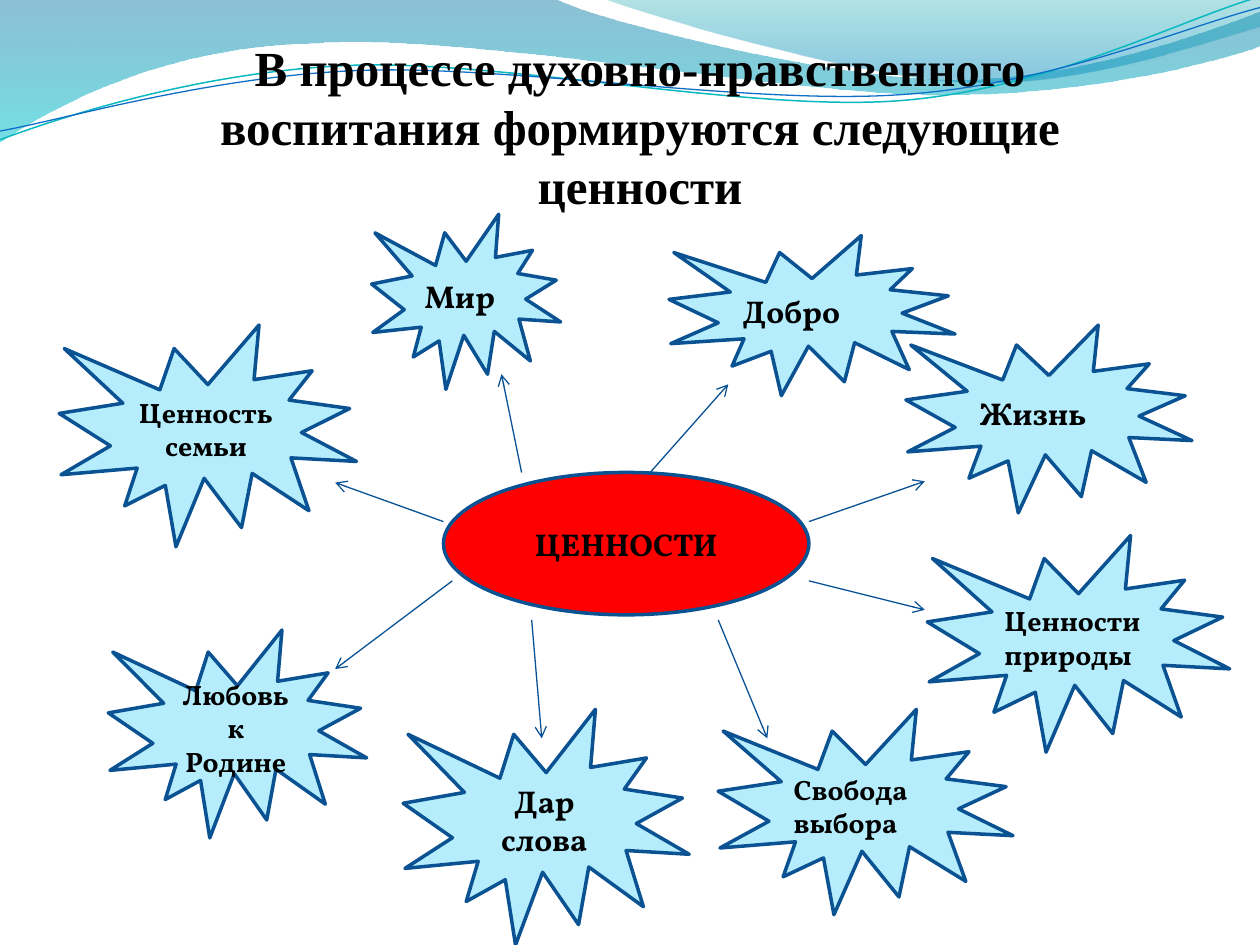
import math

from lxml import etree
from pptx import Presentation, util as u
from pptx.dml.color import RGBColor
from pptx.enum import shapes as kinds, text as txt
from pptx.oxml.ns import qn

TITLE = "В процессе духовно-нравственного воспитания формируются следующие ценности"
CENTER = ("ЦЕННОСТИ", 18, "c", (3.52, 3.75, 2.9, 1.13))
VALUES = [
    ("Ценность семьи", 16, "c", (0.47, 2.58, 2.36, 1.76)),
    ("Мир", 18, "l", (2.95, 1.7, 1.5, 1.39)),
    ("Добро", 18, "l", (5.31, 1.87, 2.27, 1.27)),
    ("Жизнь", 18, "l", (7.19, 2.58, 2.27, 1.49)),
    ("Ценности природы", 16, "l", (7.36, 4.25, 2.4, 1.72)),
    ("Свобода выбора", 16, "l", (5.7, 5.63, 2.34, 1.63)),
    ("Дар слова", 18, "c", (3.2, 5.63, 2.27, 1.87)),
    ("Любовь к Родине", 16, "c", (0.86, 5, 2.05, 1.65)),
]
ARROWS = [
    ((3.52, 4.14), (2.66, 3.83)),
    ((4.14, 3.75), (3.98, 2.97)),
    ((5.16, 3.75), (5.78, 3.05)),
    ((6.42, 4.14), (7.34, 3.82)),
    ((6.42, 4.61), (7.34, 4.84)),
    ((5.7, 4.92), (6.09, 5.86)),
    ((4.22, 4.92), (4.3, 5.86)),
    ((3.59, 4.61), (2.66, 5.31)),
]
WAVES = [
    ((-0.01, -0.01, 10.02, 1.14),
     [(0, 0), (4.4, -0.01), (4.76, 0.17, 6.64, 0.63, 7.58, 0.63),
      (8.53, 0.63, 9.58, 0.26, 10, 0.09), (10.01, 0.36),
      (9.83, 0.44, 8.7, 0.76, 7.46, 0.75), (6.22, 0.75, 3.82, 0.28, 2.57, 0.34),
      (1.29, 0.36, 0.46, 0.83, -0.01, 1.13), (0, 0)],
     [(0, "0074A1", 45), (1, "00C6CF", 55)]),
    ((4.79, -0.01, 5.21, 0.7),
     [(4.79, -0.01), (5.09, 0.11, 6.82, 0.62, 7.69, 0.65),
      (8.56, 0.69, 9.61, 0.32, 10, 0.21), (10, 0), (4.79, -0.01)],
     [(0, "00A1A9", 30), (0.8, "008BBF", 45)]),
]
STRANDS = [
    ((-0.02, 0.22, 10.02, 0.71),
     [(0, 1.11), (0.48, 0.93, 1.58, 0.57, 2.77, 0.52),
      (3.95, 0.47, 5.93, 0.89, 7.13, 0.8), (8.33, 0.71, 9.38, 0.15, 9.98, -0.02)],
     "0AB8BF", 0.85),
    ((-0.02, 0.3, 10.03, 0.58),
     [(0, 1.04), (0.47, 0.96, 1.64, 0.61, 2.83, 0.56),
      (4.03, 0.51, 5.97, 0.84, 7.17, 0.75), (8.36, 0.67, 9.41, 0.21, 10, 0.06)],
     "0F6FC6", 0.75),
]
STRAND_TILT = 357.3
ALIGN = {"c": txt.PP_ALIGN.CENTER, "l": txt.PP_ALIGN.LEFT}


def inches(value):
    return u.Cm(value * 2.54)


def color(value):
    return RGBColor.from_string(value)


def set_line(line, value, width):
    line.color.rgb = color(value)
    line.width = u.Pt(width)


def write(frame, words, size, font_name, align):
    frame.word_wrap = True
    frame.text = words
    paragraph = frame.paragraphs[0]
    paragraph.alignment = ALIGN[align]
    font = paragraph.runs[0].font
    font.size, font.name, font.bold = u.Pt(size), font_name, True
    font.color.rgb = color("000000")


def local_point(x, y, box, tilt):
    left, top, width, height = box
    dx, dy = x - left - width / 2, y - top - height / 2
    turn = math.radians(-tilt)
    return (inches(width / 2 + dx * math.cos(turn) - dy * math.sin(turn)),
            inches(height / 2 + dx * math.sin(turn) + dy * math.cos(turn)))


def add_curve(slide, box, segments, close, tilt=0):
    builder = slide.shapes.build_freeform(*map(inches, segments[0]))
    builder.add_line_segments(
        [tuple(map(inches, segment[-2:])) for segment in segments[1:]], close=close)
    curve = builder.convert_to_shape()
    curve.shadow.inherit = False
    curve.left, curve.top, curve.width, curve.height = map(inches, box)
    curve.rotation = tilt
    track = next(curve._element.iter(qn("a:path")))
    track.set("w", str(curve.width))
    track.set("h", str(curve.height))
    for step, segment in zip(list(track), segments):
        if len(segment) == 6:
            bend = etree.Element(qn("a:cubicBezTo"))
            track.replace(step, bend)
            step = bend
        for point in list(step):
            step.remove(point)
        for x, y in zip(segment[::2], segment[1::2]):
            px, py = local_point(x, y, box, tilt)
            etree.SubElement(step, qn("a:pt"), x=str(px), y=str(py))
    return curve


def add_wave(slide, box, segments, stops):
    wave = add_curve(slide, box, segments, True)
    wave.fill.gradient()
    wave.fill.gradient_angle = 270
    for stop, (position, value, _) in zip(wave.fill.gradient_stops, stops):
        stop.position = position
        stop.color.rgb = color(value)
    for tint, (_, _, opacity) in zip(wave._element.spPr.iter(qn("a:srgbClr")), stops):
        etree.SubElement(tint, qn("a:alpha")).set("val", str(opacity * 1000))
    wave.line.fill.background()


def add_label(slide, preset, fill, label):
    words, size, align, box = label
    shape = slide.shapes.add_shape(preset, *map(inches, box))
    shape.shadow.inherit = False
    shape.fill.solid()
    shape.fill.fore_color.rgb = color(fill)
    set_line(shape.line, "0B5292", 2)
    shape.text_frame.vertical_anchor = txt.MSO_ANCHOR.MIDDLE
    write(shape.text_frame, words, size, "Vollkorn", align)


def add_arrow(slide, start, end):
    arrow = slide.shapes.add_connector(
        kinds.MSO_CONNECTOR.STRAIGHT, *map(inches, start + end))
    set_line(arrow.line, "095295", 0.75)
    etree.SubElement(arrow.line._get_or_add_ln(), qn("a:tailEnd")).set("type", "arrow")
    etree.SubElement(arrow._element.spPr, qn("a:effectLst"))


def add_title(slide):
    frame = slide.shapes.add_textbox(*map(inches, (0.98, 0.92, 8.2, 1.25))).text_frame
    frame.margin_left = frame.margin_right = 0
    frame.margin_bottom = inches(0.47)
    frame.vertical_anchor = txt.MSO_ANCHOR.BOTTOM
    write(frame, TITLE, 28, "Times New Roman", "c")


def main():
    deck = Presentation()
    deck.slide_width, deck.slide_height = inches(10), inches(7.5)
    slide = deck.slides.add_slide(deck.slide_layouts[6])
    for box, segments, stops in WAVES:
        add_wave(slide, box, segments, stops)
    for box, segments, value, width in STRANDS:
        strand = add_curve(slide, box, segments, False, STRAND_TILT)
        strand.fill.background()
        set_line(strand.line, value, width)
    add_label(slide, kinds.MSO_SHAPE.OVAL, "FF0000", CENTER)
    for label in VALUES:
        add_label(slide, kinds.MSO_SHAPE.EXPLOSION1, "B5EDFD", label)
    for start, end in ARROWS:
        add_arrow(slide, start, end)
    add_title(slide)
    deck.save("out.pptx")


if __name__ == "__main__":
    main()
